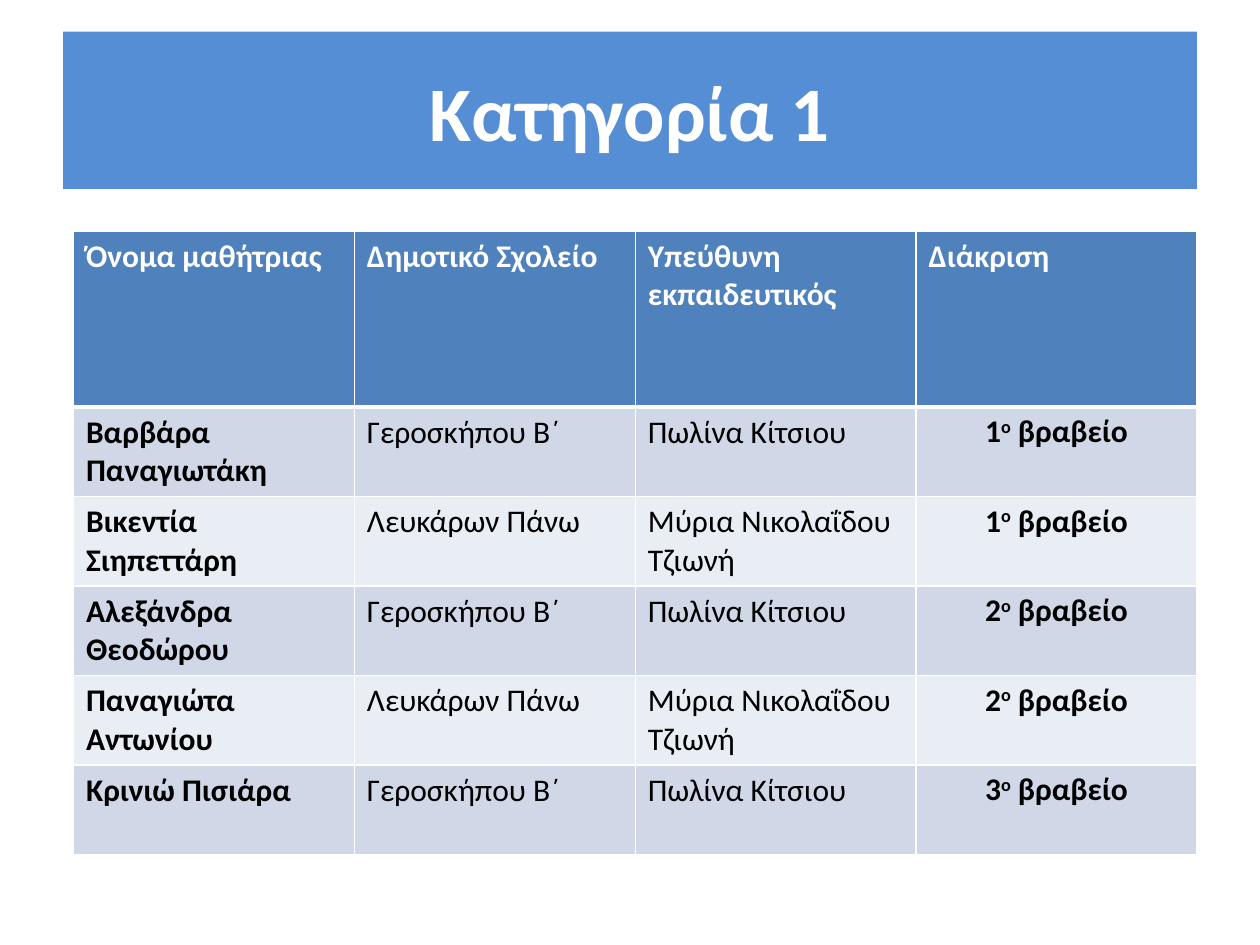
"""Build the prize list slide for category 1."""
from typing import NamedTuple

from lxml import etree
from pptx import Presentation
from pptx.dml.color import RGBColor
from pptx.enum import text as t
from pptx.oxml import ns
from pptx.util import Pt

WHITE = RGBColor(0xFF, 0xFF, 0xFF)
BLACK = RGBColor(0x00, 0x00, 0x00)
TITLE_BLUE = RGBColor(0x55, 0x8E, 0xD5)
HEADER_BLUE = RGBColor(0x4F, 0x81, 0xBD)
BANDS = (RGBColor(0xD0, 0xD8, 0xE8), RGBColor(0xE9, 0xED, 0xF4))

COLUMN_WIDTH = Pt(160.5)
HEADER_HEIGHT = Pt(100.5)
ROW_HEIGHT = Pt(51)


class Award(NamedTuple):
    pupil: str
    school: str
    teacher: str
    place: str


HEADINGS = ("Όνομα μαθήτριας", "Δημοτικό Σχολείο", "Υπεύθυνη εκπαιδευτικός", "Διάκριση")
GEROSKIPOU = ("Γεροσκήπου Β΄", "Πωλίνα Κίτσιου")
LEFKARA = ("Λευκάρων Πάνω", "Μύρια Νικολαΐδου Τζιωνή")
AWARDS = (
    Award("Βαρβάρα Παναγιωτάκη", *GEROSKIPOU, "1"),
    Award("Βικεντία Σιηπεττάρη", *LEFKARA, "1"),
    Award("Αλεξάνδρα Θεοδώρου", *GEROSKIPOU, "2"),
    Award("Παναγιώτα Αντωνίου", *LEFKARA, "2"),
    Award("Κρινιώ Πισιάρα", *GEROSKIPOU, "3"),
)


def write(paragraph, wording: str, *, size: float = 18, color: RGBColor = BLACK,
          bold: bool = False, align=t.PP_ALIGN.LEFT, raised: bool = False) -> None:
    """Append a formatted run to a paragraph."""
    paragraph.alignment = align
    run = paragraph.add_run()
    run.text = wording
    run.font.name = "Calibri"
    run.font.size = Pt(size)
    run.font.bold = bold
    run.font.color.rgb = color
    if raised:
        run.font._element.set("baseline", "30000")


def style_cell(cell, fill: RGBColor, top: float = 1, bottom: float = 1) -> None:
    """Give a cell white borders and a solid fill."""
    properties = cell._tc.get_or_add_tcPr()
    for side, width in (("L", 1), ("R", 1), ("T", top), ("B", bottom)):
        border = etree.SubElement(properties, ns.qn(f"a:ln{side}"), w=str(Pt(width)))
        line_fill = etree.SubElement(border, ns.qn("a:solidFill"))
        etree.SubElement(line_fill, ns.qn("a:srgbClr"), val=str(WHITE))
    cell.fill.solid()
    cell.fill.fore_color.rgb = fill


def write_prize(cell, place: str) -> None:
    """Write a centred prize with a raised ordinal ending."""
    cell.margin_left = cell.margin_right = Pt(5)
    cell.margin_top = cell.margin_bottom = 0
    paragraph = cell.text_frame.paragraphs[0]
    paragraph.line_spacing = 1.15
    for wording, raised in ((place, False), ("ο", True), (" βραβείο", False)):
        write(paragraph, wording, bold=True, align=t.PP_ALIGN.CENTER, raised=raised)


def add_title(slide, wording: str) -> None:
    """Place the title on its blue band."""
    title = slide.shapes.title
    title.left, title.top, title.width, title.height = Pt(36), Pt(18), Pt(648), Pt(90)
    title.fill.solid()
    title.fill.fore_color.rgb = TITLE_BLUE
    title.text_frame.vertical_anchor = t.MSO_ANCHOR.MIDDLE
    write(title.text_frame.paragraphs[0], wording, size=44, color=WHITE, bold=True,
          align=t.PP_ALIGN.CENTER)


def add_awards(slide, awards: tuple[Award, ...]) -> None:
    """Draw the table of awards under its headings."""
    count = len(HEADINGS)
    table = slide.shapes.add_table(
        len(awards) + 1, count, Pt(42), Pt(132), COLUMN_WIDTH * count,
        HEADER_HEIGHT + ROW_HEIGHT * len(awards)).table
    for column in table.columns:
        column.width = COLUMN_WIDTH
    for index, row in enumerate(table.rows):
        row.height = ROW_HEIGHT if index else HEADER_HEIGHT

    for column, heading in enumerate(HEADINGS):
        cell = table.cell(0, column)
        style_cell(cell, HEADER_BLUE, bottom=3)
        write(cell.text_frame.paragraphs[0], heading, color=WHITE, bold=True)

    for index, award in enumerate(awards):
        cells = table.rows[index + 1].cells
        for cell in cells:
            style_cell(cell, BANDS[index % 2], top=1 if index else 3)
        for column, wording in enumerate(award[:3]):
            write(cells[column].text_frame.paragraphs[0], wording, bold=column == 0)
        write_prize(cells[3], award.place)


def main() -> None:
    """Build and save the slide."""
    deck = Presentation()
    deck.slide_width, deck.slide_height = Pt(720), Pt(540)
    slide = deck.slides.add_slide(deck.slide_layouts[5])
    add_title(slide, "Κατηγορία 1")
    add_awards(slide, AWARDS)
    deck.save("out.pptx")


if __name__ == "__main__":
    main()
